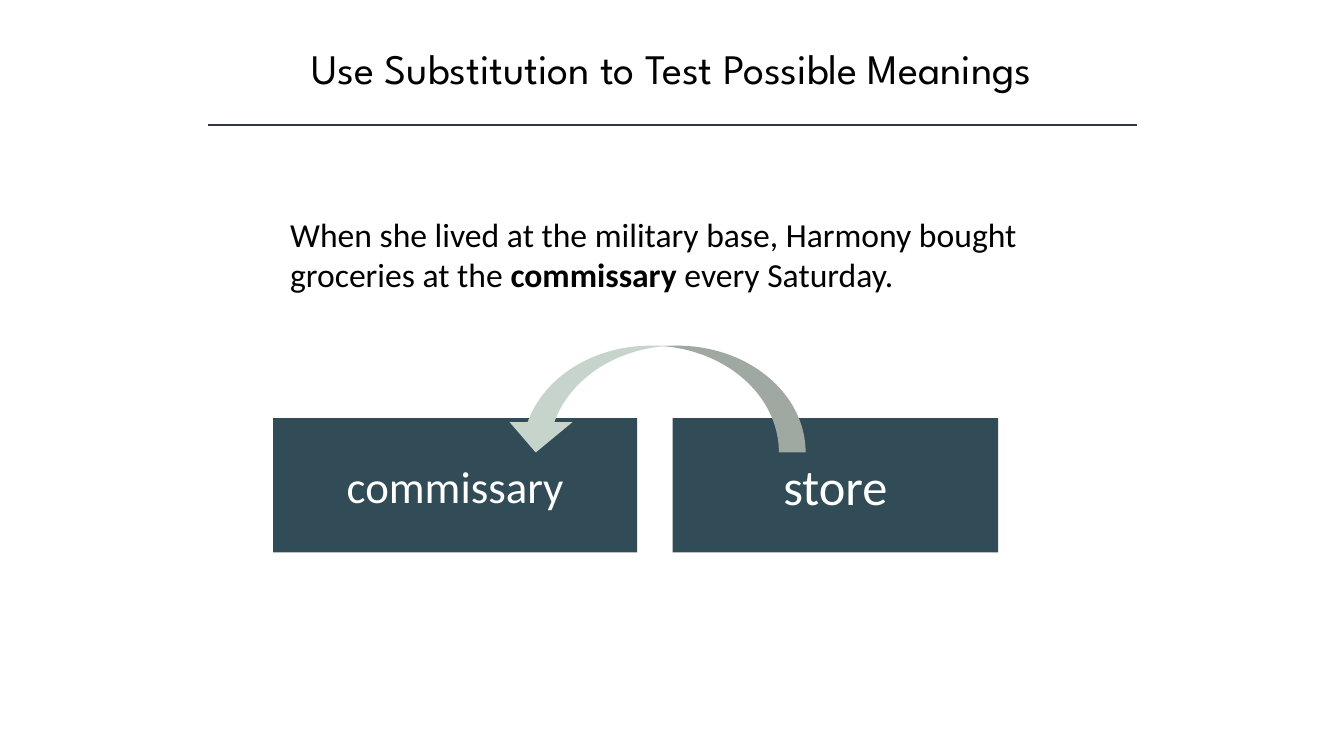
from pptx import Presentation
from pptx.dml.color import RGBColor
from pptx.enum.shapes import MSO_CONNECTOR, MSO_SHAPE
from pptx.enum.text import MSO_ANCHOR, MSO_AUTO_SIZE, PP_ALIGN
from pptx.oxml.ns import qn
from pptx.util import Inches, Pt
from lxml.etree import SubElement

WIDTH, HEIGHT = Inches(13.33), Inches(7.5)
BODY_FONT, TITLE_FONT = "Calibri", "League Spartan"
BLACK, WHITE, TEAL, SAGE, SLATE = "000000", "FFFFFF", "314C57", "C7D4CB", "323542"
CARD_TOP, CARD_HEIGHT = 55.33, 17.73


def color(hex_string):
    return RGBColor.from_string(hex_string)


def area(left, top, width, height):
    """Turn percentages of the slide's width and height into lengths."""
    return (int(WIDTH * left / 100), int(HEIGHT * top / 100),
            int(WIDTH * width / 100), int(HEIGHT * height / 100))


def style(para, size, font, hex_string, align):
    para.alignment = align
    for span in para.runs:
        span.font.size = Pt(size)
        span.font.name = font
        span.font.color.rgb = color(hex_string)


def add_text(page, place, text, size, font, align=PP_ALIGN.LEFT):
    box = page.shapes.add_textbox(*area(*place))
    frame = box.text_frame
    frame.word_wrap = True
    frame.auto_size = MSO_AUTO_SIZE.SHAPE_TO_FIT_TEXT
    para = frame.paragraphs[0]
    para.text = text
    style(para, size, font, BLACK, align)
    return para


def add_sentence(page, place, before, key_word, after):
    """Add a sentence whose key word is bold."""
    para = add_text(page, place, before, 24, BODY_FONT)
    for text, bold in ((key_word, True), (after, False)):
        span = para.add_run()
        span.text = text
        span.font.bold = bold
    style(para, 24, BODY_FONT, BLACK, PP_ALIGN.LEFT)


def add_rule(page, left, right, top):
    x, y, length, _ = area(left, top, right - left, 0)
    rule = page.shapes.add_connector(MSO_CONNECTOR.STRAIGHT, x, y, x + length, y)
    rule.line.color.rgb = color(SLATE)
    rule.line.width = Pt(1)
    SubElement(rule.element.spPr, qn("a:effectLst"))


def add_filled(page, preset, place, fill):
    shape = page.shapes.add_shape(preset, *area(*place))
    shape.shadow.inherit = False
    shape.fill.solid()
    shape.fill.fore_color.rgb = color(fill)
    shape.line.fill.background()
    return shape


def add_word_card(page, left, width, word, size):
    card = add_filled(page, MSO_SHAPE.RECTANGLE, (left, CARD_TOP, width, CARD_HEIGHT), TEAL)
    frame = card.text_frame
    frame.text = word
    frame.vertical_anchor = MSO_ANCHOR.MIDDLE
    style(frame.paragraphs[0], size, BODY_FONT, WHITE, PP_ALIGN.CENTER)


def add_swap_arrow(page, place):
    """Add the curved arrow that leads from the right card to the left one."""
    arrow = add_filled(page, MSO_SHAPE.CURVED_DOWN_ARROW, place, SAGE)
    for index, value in enumerate((0.25, 0.59, 0.285)):
        arrow.adjustments[index] = value
    arrow.rotation = 180
    arrow.element.spPr.find(qn("a:xfrm")).set("flipV", "1")


def main():
    deck = Presentation()
    deck.slide_width, deck.slide_height = WIDTH, HEIGHT
    page = deck.slides.add_slide(deck.slide_layouts[6])
    add_text(page, (12.5, 4.93, 75, 8.13), "Use Substitution to Test Possible Meanings",
             30, TITLE_FONT, PP_ALIGN.CENTER)
    add_rule(page, 15.45, 84.62, 16.53)
    add_sentence(page, (20.85, 27.6, 60.09, 12.13),
                 "When she lived at the military base, Harmony bought groceries at the ",
                 "commissary", " every Saturday.")
    add_word_card(page, 50.04, 24.23, "store", 36)
    add_word_card(page, 20.33, 27.08, "commissary", 32)
    add_swap_arrow(page, (37.51, 45.73, 22.43, 14.13))
    deck.save("out.pptx")


if __name__ == "__main__":
    main()
